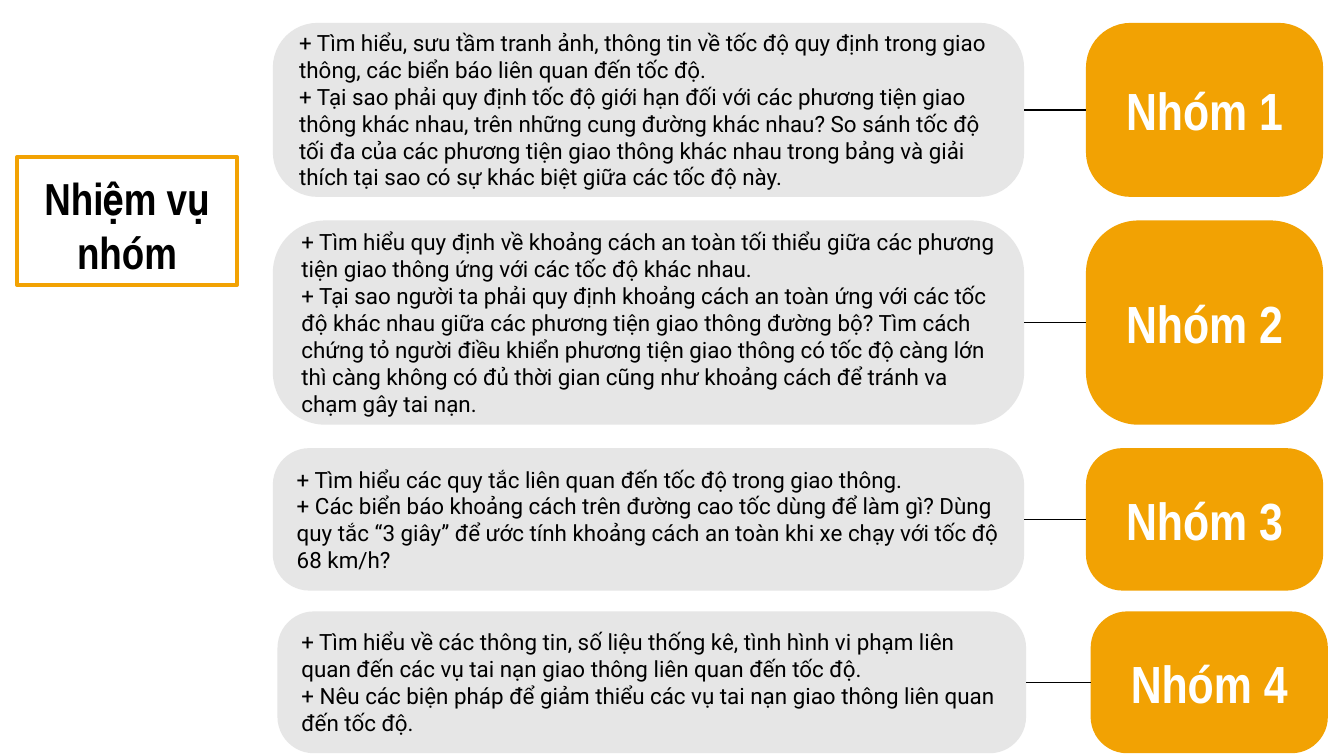
from dataclasses import dataclass

from pptx import Presentation
from pptx import util as u
from pptx.dml.color import RGBColor
from pptx.enum import shapes, text
from pptx.oxml.ns import qn
from lxml import etree


@dataclass
class Theme:
    orange: str = "F2A203"
    gray: str = "E6E6E6"
    black: str = "000000"
    white: str = "FFFFFF"
    heading_font: str = "Arial Narrow"
    body_font: str = "Roboto"
    title_size: int = 24
    label_size: int = 28
    body_size: int = 12


theme = Theme()
PX = u.Inches(1) // 200
INSET = 20 * PX
ROUNDING = 0.257


def write(tf, lines, font, size, color, bold, align):
    tf.word_wrap = True
    tf.auto_size = text.MSO_AUTO_SIZE.NONE
    tf.text = "\n".join(lines)
    for p in tf.paragraphs:
        p.alignment = align
        for r in p.runs:
            r.font.name = font
            r.font.size = u.Pt(size)
            r.font.bold = bold
            r.font.color.rgb = RGBColor.from_string(color)


def add_card(parent, left, top, width, height, fill):
    sp = parent.shapes.add_shape(
        shapes.MSO_SHAPE.ROUNDED_RECTANGLE,
        left * PX, top * PX, width * PX, height * PX)
    sp.adjustments[0] = ROUNDING
    sp.shadow.inherit = False
    sp.fill.solid()
    sp.fill.fore_color.rgb = RGBColor.from_string(fill)
    sp.line.fill.background()
    tf = sp.text_frame
    tf.margin_left = tf.margin_right = tf.margin_top = tf.margin_bottom = INSET
    tf.vertical_anchor = text.MSO_ANCHOR.MIDDLE
    return tf


prs = Presentation()
prs.slide_width, prs.slide_height = 2000 * PX, 1125 * PX
slide = prs.slides.add_slide(prs.slide_layouts[5])

title = slide.shapes.title
title.left, title.top, title.width, title.height = 25 * PX, 234 * PX, 328 * PX, 190 * PX
title.fill.solid()
title.fill.fore_color.rgb = RGBColor.from_string(theme.white)
title.line.color.rgb = RGBColor.from_string(theme.orange)
title.line.width = u.Pt(2)
tf = title.text_frame
tf.margin_left = tf.margin_right = 0
tf.margin_top = tf.margin_bottom = INSET
tf.vertical_anchor = text.MSO_ANCHOR.TOP
write(tf, ["Nhiệm vụ nhóm"], theme.heading_font, theme.title_size,
      theme.black, True, text.PP_ALIGN.CENTER)

LABEL_WIDTH = 353
LABEL_OFFSET = 1210
groups = [
    (406, 34, 1118, 259, [
        "+ Tìm hiểu, sưu tầm tranh ảnh, thông tin về tốc độ quy định trong giao thông, các biển báo liên quan đến tốc độ.",
        "+ Tại sao phải quy định tốc độ giới hạn đối với các phương tiện giao thông khác nhau, trên những cung đường khác nhau? So sánh tốc độ tối đa của các phương tiện giao thông khác nhau trong bảng và giải thích tại sao có sự khác biệt giữa các tốc độ này.",
    ]),
    (406, 328, 1118, 304, [
        "+ Tìm hiểu quy định về khoảng cách an toàn tối thiểu giữa các phương tiện giao thông ứng với các tốc độ khác nhau.",
        "+ Tại sao người ta phải quy định khoảng cách an toàn ứng với các tốc độ khác nhau giữa các phương tiện giao thông đường bộ? Tìm cách chứng tỏ người điều khiển phương tiện giao thông có tốc độ càng lớn thì càng không có đủ thời gian cũng như khoảng cách để tránh va chạm gây tai nạn.",
    ]),
    (406, 667, 1118, 212, [
        "+ Tìm hiểu các quy tắc liên quan đến tốc độ trong giao thông.",
        "+ Các biển báo khoảng cách trên đường cao tốc dùng để làm gì? Dùng quy tắc “3 giây” để ước tính khoảng cách an toàn khi xe chạy với tốc độ 68 km/h?",
    ]),
    (413, 910, 1114, 211, [
        "+ Tìm hiểu về các thông tin, số liệu thống kê, tình hình vi phạm liên quan đến các vụ tai nạn giao thông liên quan đến tốc độ.",
        "+ Nêu các biện pháp để giảm thiểu các vụ tai nạn giao thông liên quan đến tốc độ.",
    ]),
]

for number, (left, top, width, height, tasks) in enumerate(groups, 1):
    group = slide.shapes.add_group_shape()
    label_left = left + LABEL_OFFSET
    tf = add_card(group, left, top, width, height, theme.gray)
    write(tf, tasks, theme.body_font, theme.body_size,
          theme.black, False, text.PP_ALIGN.LEFT)
    tf = add_card(group, label_left, top, LABEL_WIDTH, height, theme.orange)
    write(tf, [f"Nhóm {number}"], theme.heading_font, theme.label_size,
          theme.white, True, text.PP_ALIGN.CENTER)
    middle = top + (height + 1) // 2
    line = group.shapes.add_connector(
        shapes.MSO_CONNECTOR.STRAIGHT,
        label_left * PX, middle * PX, (left + width) * PX, middle * PX)
    line.line.color.rgb = RGBColor.from_string(theme.black)
    line.line.width = u.Pt(0.75)
    etree.SubElement(line._element.spPr, qn("a:effectLst"))

prs.save("out.pptx")
